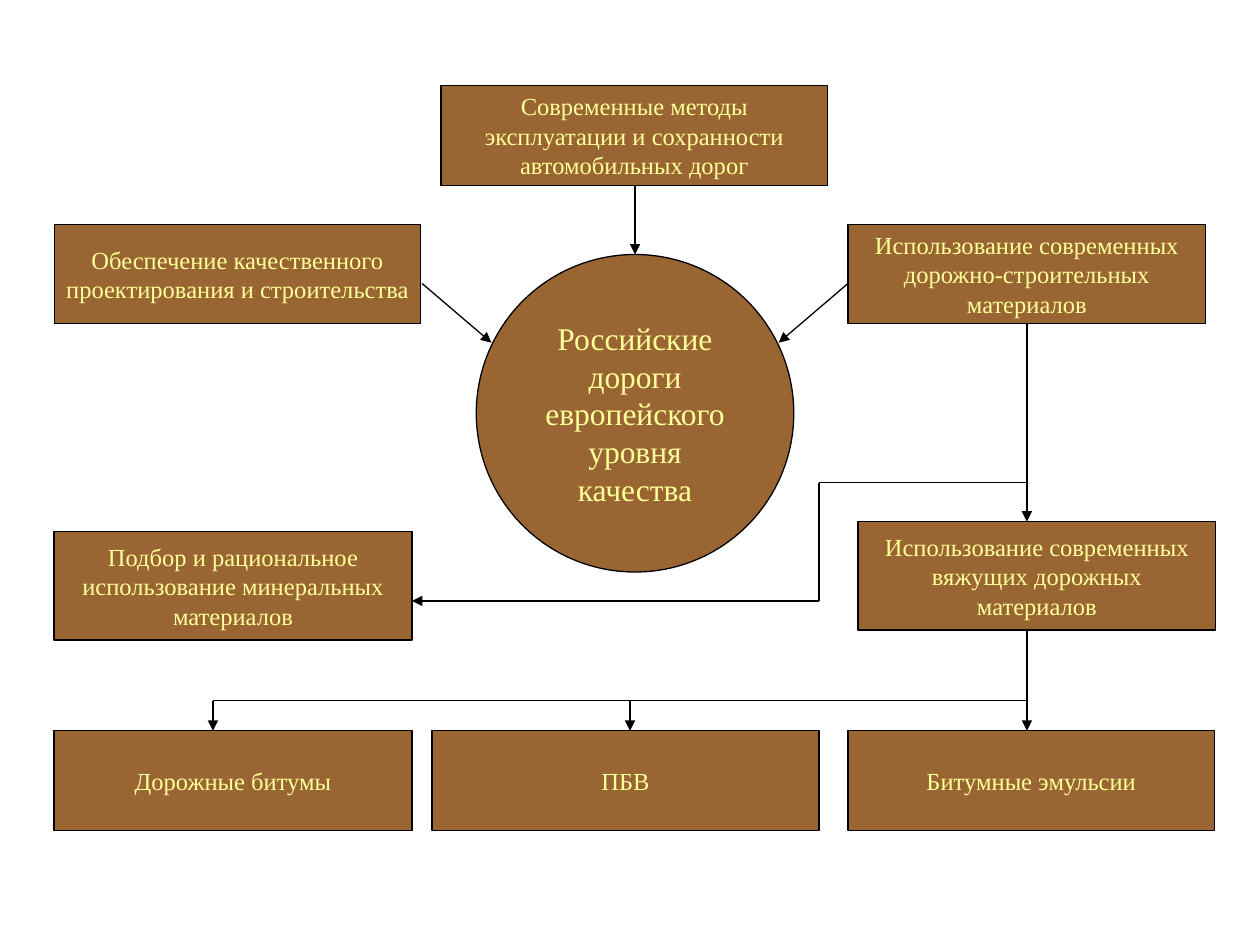
from dataclasses import dataclass

import lxml.etree
import pptx
import pptx.dml.color
import pptx.enum.shapes
import pptx.enum.text
import pptx.oxml.ns
import pptx.util

Inches = pptx.util.Inches
RECTANGLE = pptx.enum.shapes.MSO_SHAPE.RECTANGLE
OVAL = pptx.enum.shapes.MSO_SHAPE.OVAL


@dataclass(frozen=True)
class Theme:
    """Colours, font and sizes of the slide."""
    fill: str = "996633"
    line: str = "000000"
    text: str = "FFFF99"
    font: str = "Times New Roman"
    box_size: int = 14
    goal_size: int = 18
    line_width: float = 0.75


THEME = Theme()

LEFT = 0.43
RIGHT = 6.73
SUPPLY_X = 8.15
BRANCH_X = 6.5
BRANCH_TOP = 3.83
BRANCH_BOTTOM = 4.77
BUS_Y = 5.56
PRODUCTS_Y = 5.8
BOX_HEIGHT = 0.79
TALL_HEIGHT = 0.86

BOXES = [
    ("Обеспечение качественного проектирования и строительства", LEFT, 1.78, 2.91, BOX_HEIGHT, True),
    ("Современные методы эксплуатации и сохранности автомобильных дорог", 3.5, 0.68, 3.07, BOX_HEIGHT, False),
    ("Использование современных дорожно-строительных материалов", RIGHT, 1.78, 2.84, BOX_HEIGHT, False),
    ("Подбор и рациональное использование минеральных материалов", LEFT, 4.22, 2.84, TALL_HEIGHT, False),
    ("Использование современных вяжущих дорожных материалов", 6.81, 4.14, 2.84, TALL_HEIGHT, False),
    ("Дорожные битумы", LEFT, PRODUCTS_Y, 2.84, BOX_HEIGHT, True),
    ("ПБВ", 3.43, PRODUCTS_Y, 3.07, BOX_HEIGHT, False),
    ("Битумные эмульсии", RIGHT, PRODUCTS_Y, 2.91, BOX_HEIGHT, False),
]

ARROWS = [
    (3.35, 2.25, 3.9, 2.72),
    (RIGHT, 2.25, 6.18, 2.72),
    (5.04, 1.47, 5.04, 2.02),
    (SUPPLY_X, 2.57, SUPPLY_X, 4.14),
    (BRANCH_X, BRANCH_BOTTOM, 3.27, BRANCH_BOTTOM),
    (1.69, BUS_Y, 1.69, PRODUCTS_Y),
    (5, BUS_Y, 5, PRODUCTS_Y),
    (SUPPLY_X, 5.01, SUPPLY_X, PRODUCTS_Y),
]

PLAIN_LINES = [
    (1.69, BUS_Y, SUPPLY_X, BUS_Y),
    (BRANCH_X, BRANCH_BOTTOM, BRANCH_X, BRANCH_TOP),
    (BRANCH_X, BRANCH_TOP, SUPPLY_X, BRANCH_TOP),
]


def rgb(value):
    """Return a colour object for a hexadecimal string."""
    return pptx.dml.color.RGBColor.from_string(value)


def style_line(line):
    """Apply the theme's line colour and width."""
    line.color.rgb = rgb(THEME.line)
    line.width = pptx.util.Pt(THEME.line_width)


def add_node(slide, kind, text, left, top, width, height, size, tight=False):
    """Add a filled shape with centred text."""
    shape = slide.shapes.add_shape(kind, Inches(left), Inches(top), Inches(width), Inches(height))
    shape.shadow.inherit = False
    shape.fill.solid()
    shape.fill.fore_color.rgb = rgb(THEME.fill)
    style_line(shape.line)
    frame = shape.text_frame
    frame.word_wrap = True
    frame.vertical_anchor = pptx.enum.text.MSO_ANCHOR.MIDDLE
    if tight:
        frame.margin_left = frame.margin_right = frame.margin_top = frame.margin_bottom = 0
    frame.text = text
    paragraph = frame.paragraphs[0]
    paragraph.alignment = pptx.enum.text.PP_ALIGN.CENTER
    font = paragraph.runs[0].font
    font.name = THEME.font
    font.size = pptx.util.Pt(size)
    font.color.rgb = rgb(THEME.text)


def add_line(slide, points, arrow=False):
    """Add a straight connector, optionally with an arrowhead at its end."""
    connector = slide.shapes.add_connector(
        pptx.enum.shapes.MSO_CONNECTOR.STRAIGHT, *(Inches(value) for value in points))
    style_line(connector.line)
    qn = pptx.oxml.ns.qn
    properties = connector._element.spPr
    if arrow:
        lxml.etree.SubElement(properties.find(qn("a:ln")), qn("a:tailEnd"), type="triangle")
    lxml.etree.SubElement(properties, qn("a:effectLst"))


def main():
    """Build the slide and save it."""
    presentation = pptx.Presentation()
    presentation.slide_width = Inches(10)
    presentation.slide_height = Inches(7.5)
    slide = presentation.slides.add_slide(presentation.slide_layouts[6])
    for text, left, top, width, height, tight in BOXES:
        add_node(slide, RECTANGLE, text, left, top, width, height, THEME.box_size, tight)
    add_node(slide, OVAL, "Российские дороги европейского уровня качества",
             3.78, 2.02, 2.52, 2.52, THEME.goal_size)
    for points in ARROWS:
        add_line(slide, points, arrow=True)
    for points in PLAIN_LINES:
        add_line(slide, points)
    presentation.save("out.pptx")


if __name__ == "__main__":
    main()
